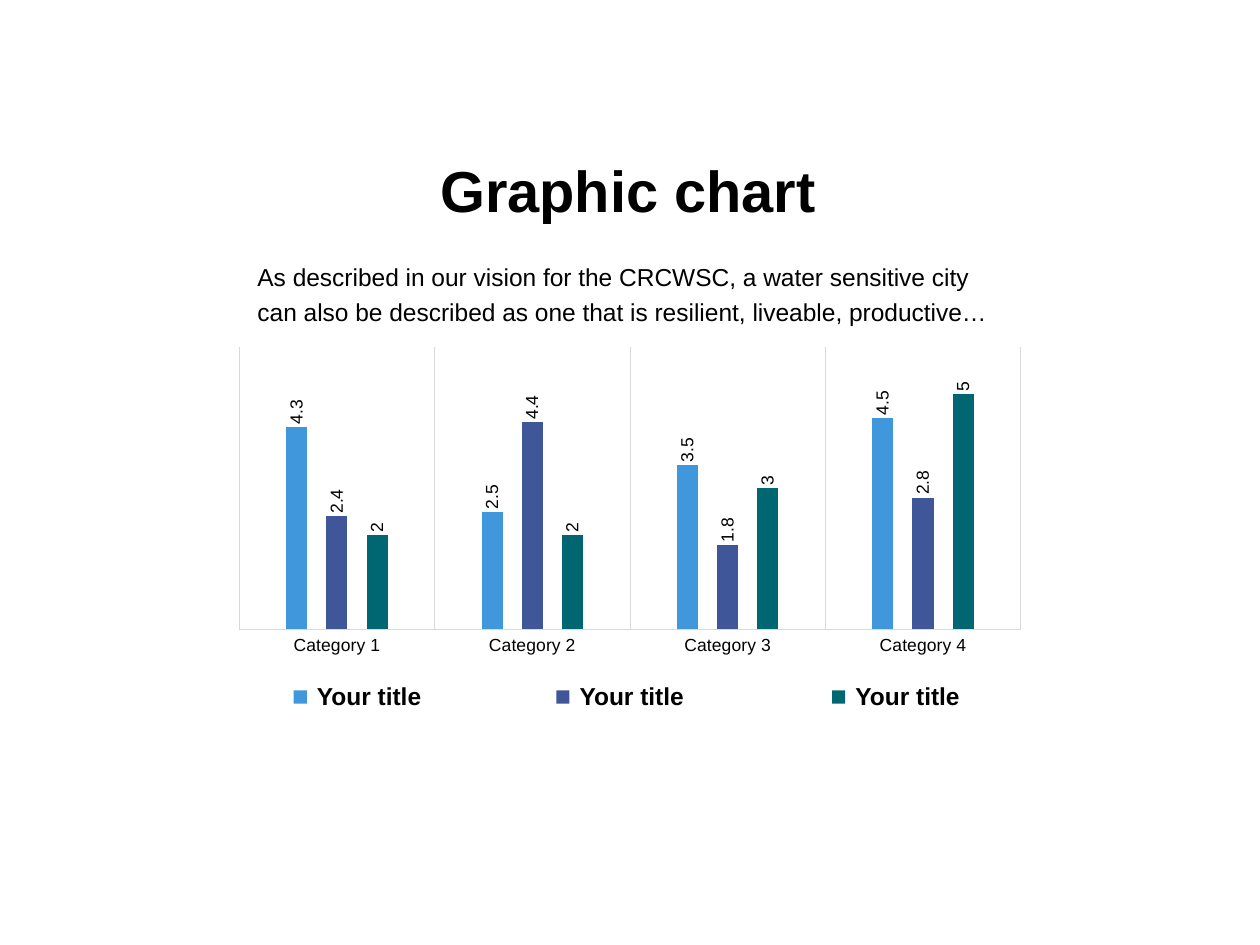
from dataclasses import dataclass

from lxml.etree import SubElement
from pptx import Presentation
from pptx.chart.data import CategoryChartData
from pptx.dml.color import RGBColor
from pptx.enum.chart import XL_CHART_TYPE, XL_LABEL_POSITION, XL_TICK_LABEL_POSITION, XL_TICK_MARK
from pptx.enum.shapes import MSO_SHAPE
from pptx.enum.text import PP_ALIGN
from pptx.oxml import parse_xml
from pptx.oxml.ns import nsdecls, qn
from pptx.util import Cm, Pt


@dataclass(frozen=True)
class Theme:
    font: str = "Arial"
    text: RGBColor = RGBColor(0, 0, 0)
    grid: RGBColor = RGBColor(0xD9, 0xD9, 0xD9)
    series: tuple = (
        RGBColor(0x40, 0x97, 0xDB),
        RGBColor(0x3F, 0x57, 0x99),
        RGBColor(0x00, 0x67, 0x72),
    )
    title_size: int = 66
    body_size: int = 28
    chart_size: int = 20


THEME = Theme()
CATEGORIES = [f"Category {n}" for n in range(1, 5)]
VALUES = [(4.3, 2.5, 3.5, 4.5), (2.4, 4.4, 1.8, 2.8), (2, 2, 3, 5)]
LEGEND_LEFTS = (11.84, 22.43, 33.55)
PLOT_AREA = {"x": 0.02, "y": 0.02, "w": 0.96, "h": 0.89}


def style_font(font, size, bold=False):
    font.name = THEME.font
    font.size = Pt(size)
    font.bold = bold
    font.color.rgb = THEME.text


def add_text(s, box, text, size, bold=False, align=PP_ALIGN.LEFT, spacing=1.0, wrap=True):
    tf = s.shapes.add_textbox(*map(Cm, box)).text_frame
    tf.word_wrap = wrap
    tf.text = text
    p = tf.paragraphs[0]
    p.alignment = align
    p.line_spacing = spacing
    style_font(p.runs[0].font, size, bold)


def add_legend_entry(s, left, color):
    sp = s.shapes.add_shape(MSO_SHAPE.RECTANGLE, Cm(left), Cm(27.84), Cm(0.53), Cm(0.53))
    sp.shadow.inherit = False
    sp.fill.solid()
    sp.fill.fore_color.rgb = color
    sp.line.fill.background()
    add_text(s, (left + 0.69, 27.34, 7.95, 1.45), "Your title", THEME.body_size, bold=True)


def place_plot_area(chart):
    area = chart.plots[0]._element.getparent()
    for old in area.findall(qn("c:layout")):
        area.remove(old)
    layout = parse_xml(f"<c:layout {nsdecls('c')}/>")
    manual = SubElement(layout, qn("c:manualLayout"))
    settings = {"layoutTarget": "inner", "xMode": "edge", "yMode": "edge", **PLOT_AREA}
    for name, value in settings.items():
        SubElement(manual, qn(f"c:{name}")).set("val", str(value))
    area.insert(0, layout)


def style_axes(chart):
    axis = chart.category_axis
    axis.major_tick_mark = axis.minor_tick_mark = XL_TICK_MARK.NONE
    axis.tick_label_position = XL_TICK_LABEL_POSITION.LOW
    axis.has_major_gridlines = True
    for line in (axis.format.line, axis.major_gridlines.format.line):
        line.color.rgb = THEME.grid
        line.width = Pt(0.75)
    axis = chart.value_axis
    axis.minimum_scale, axis.maximum_scale = 0, 6
    axis.has_major_gridlines = False
    axis.visible = False


def style_series(series, color):
    series.format.fill.solid()
    series.format.fill.fore_color.rgb = color
    labels = series.data_labels
    labels.show_value = True
    labels.position = XL_LABEL_POSITION.OUTSIDE_END
    style_font(labels.font, THEME.chart_size)
    body = labels._element.find(qn("c:txPr")).find(qn("a:bodyPr"))
    body.set("rot", "-5400000")
    body.set("vert", "horz")


def add_column_chart(s, box):
    data = CategoryChartData()
    data.categories = CATEGORIES
    for n, values in enumerate(VALUES, 1):
        data.add_series(f"Series {n}", values)
    chart = s.shapes.add_chart(XL_CHART_TYPE.COLUMN_CLUSTERED, *map(Cm, box), data).chart
    chart.has_title = False
    chart.has_legend = False
    style_font(chart.font, THEME.chart_size)
    plot = chart.plots[0]
    plot.vary_by_categories = False
    plot.gap_width = 444
    plot.overlap = -90
    for series, color in zip(plot.series, THEME.series):
        style_series(series, color)
    style_axes(chart)
    place_plot_area(chart)


def main():
    """Build the slide with a column chart and its legend."""
    prs = Presentation()
    prs.slide_width, prs.slide_height = Cm(50.8), Cm(38.1)
    s = prs.slides.add_slide(prs.slide_layouts[6])
    add_column_chart(s, (8.99, 13.74, 32.82, 12.78))
    for left, color in zip(LEGEND_LEFTS, THEME.series):
        add_legend_entry(s, left, color)
    add_text(s, (17.42, 6.12, 15.8, 3.07), "Graphic chart", THEME.title_size,
             bold=True, align=PP_ALIGN.CENTER, wrap=False)
    add_text(s, (10.13, 10.21, 30.56, 3.1),
             "As described in our vision for the CRCWSC, a water sensitive city can also be "
             "described as one that is resilient, liveable, productive…",
             THEME.body_size, spacing=1.2)
    prs.save("out.pptx")


if __name__ == "__main__":
    main()
